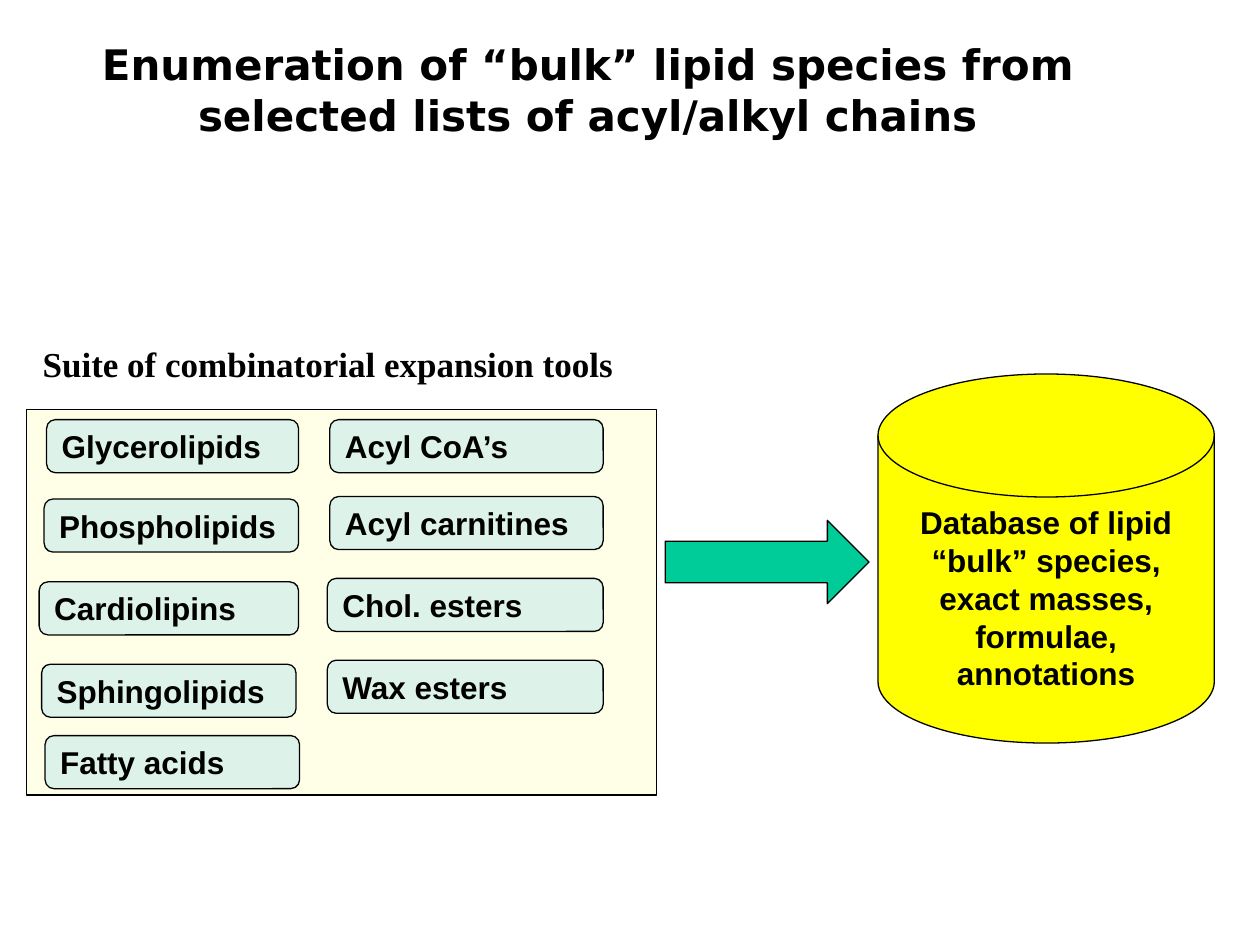
"""Builds the slide on enumerating bulk lipid species."""
from lxml import etree
from pptx import Presentation
from pptx.dml.color import RGBColor
from pptx.enum.shapes import MSO_SHAPE as Preset
from pptx.enum.text import MSO_ANCHOR as Anchor, MSO_AUTO_SIZE as AutoSize, PP_ALIGN as Align
from pptx.oxml.ns import qn
from pptx.util import Cm, Pt

BLACK, YELLOW, MINT, GREEN = "000000", "FFFF00", "DDF3EA", "00CC99"
TOOL_HEIGHT = 1.07
TOOLS = [
    ("Glycerolipids", 0.94, 8.46, 5.08),
    ("Phospholipids", 0.89, 10.06, 5.13),
    ("Cardiolipins", 0.79, 11.73, 5.23),
    ("Sphingolipids", 0.84, 13.39, 5.13),
    ("Fatty acids", 0.91, 14.83, 5.13),
    ("Acyl CoA’s", 6.65, 8.46, 5.51),
    ("Acyl carnitines", 6.65, 10.01, 5.51),
    ("Chol. esters", 6.6, 11.66, 5.56),
    ("Wax esters", 6.6, 13.31, 5.56),
]


def color(value):
    return RGBColor.from_string(value)


def write(shape, text, size=18, font="Arial", align=Align.LEFT, anchor=Anchor.MIDDLE, wrap=True):
    frame = shape.text_frame
    frame.auto_size = AutoSize.NONE
    frame.word_wrap = wrap
    frame.vertical_anchor = anchor
    paragraph = frame.paragraphs[0]
    paragraph.alignment = align
    run = paragraph.add_run()
    run.text = text
    run.font.name = font
    run.font.size = Pt(size)
    run.font.bold = True
    run.font.color.rgb = color(BLACK)


class SlideBuilder:
    def __init__(self, slide, line_width=0.75):
        self.slide = slide
        self.line_width = line_width

    def title(self, text, left, top, width, height, **style):
        title = self.slide.shapes.title
        title.left, title.top, title.width, title.height = map(Cm, (left, top, width, height))
        write(title, text, **style)

    def label(self, text, left, top, width, height, **style):
        box = self.slide.shapes.add_textbox(*map(Cm, (left, top, width, height)))
        write(box, text, **style)

    def shape(self, preset, left, top, width, height, fill, text=None, opacity=None, **style):
        shape = self.slide.shapes.add_shape(preset, *map(Cm, (left, top, width, height)))
        shape.shadow.inherit = False
        shape.fill.solid()
        shape.fill.fore_color.rgb = color(fill)
        shape.line.color.rgb = color(BLACK)
        shape.line.width = Pt(self.line_width)
        if opacity is not None:
            fill_color = shape.element.spPr.find(qn("a:solidFill"))[0]
            etree.SubElement(fill_color, qn("a:alpha"), val=str(opacity * 1000))
        if text:
            write(shape, text, **style)


def main():
    presentation = Presentation()
    presentation.slide_width, presentation.slide_height = Cm(25.4), Cm(19.05)
    builder = SlideBuilder(presentation.slides.add_slide(presentation.slide_layouts[5]))

    builder.title("Enumeration of “bulk” lipid species from selected lists of acyl/alkyl chains",
                  0.84, 0.64, 22.02, 2.31, size=24, font="DejaVu Sans", align=Align.CENTER)
    builder.label("Suite of combinatorial expansion tools", 0.61, 6.78, 12.09, 1.12,
                  size=20, font="Times New Roman", anchor=Anchor.TOP, wrap=False)
    builder.shape(Preset.RECTANGLE, 0.53, 8.26, 12.7, 7.77, YELLOW, opacity=9)
    for name, left, top, width in TOOLS:
        builder.shape(Preset.ROUNDED_RECTANGLE, left, top, width, TOOL_HEIGHT, MINT, name)
    builder.shape(Preset.RIGHT_ARROW, 13.41, 10.49, 4.11, 1.68, GREEN)
    builder.shape(Preset.FLOWCHART_MAGNETIC_DISK, 17.7, 7.54, 6.78, 7.44, YELLOW,
                  "Database of lipid “bulk” species, exact masses, formulae, annotations",
                  align=Align.CENTER, anchor=Anchor.TOP)

    presentation.save("out.pptx")


if __name__ == "__main__":
    main()
